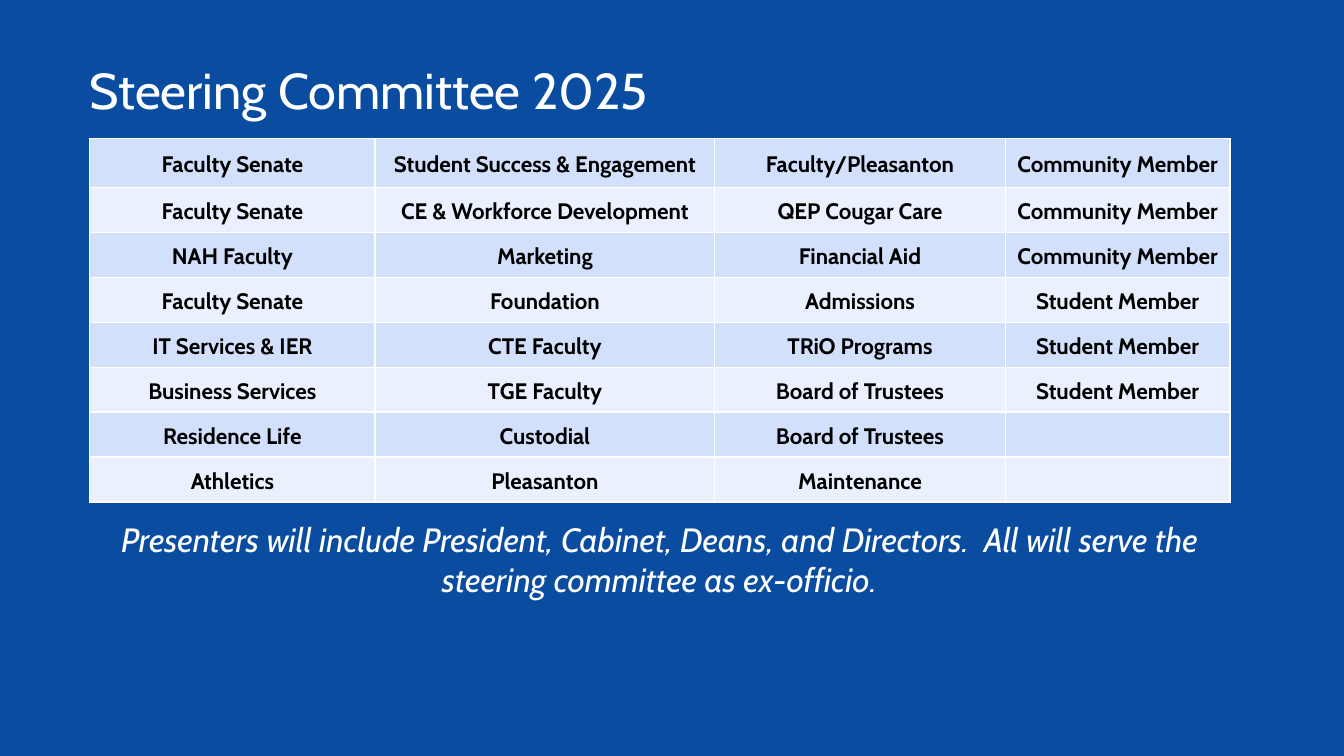
import pptx
import pptx.util
import pptx.dml.color
import pptx.enum.text
import pptx.oxml
import pptx.oxml.ns

Color = pptx.dml.color.RGBColor
BLUE = Color(0x0A, 0x4D, 0xA0)
WHITE = Color(0xFF, 0xFF, 0xFF)
BLACK = Color(0x00, 0x00, 0x00)
BANDS = (Color(0xD2, 0xE0, 0xFB), Color(0xEA, 0xF0, 0xFD))

WIDE = pptx.util.Inches(13.33)
HIGH = pptx.util.Inches(7.5)
FONT = "Cabin"
LEFT = pptx.enum.text.PP_ALIGN.LEFT
MID = pptx.enum.text.PP_ALIGN.CENTER

COLS = (2.83, 3.37, 2.88, 2.23)
TOTAL = 3.61
HEAD = 0.49

SEATS = (
    ("Faculty Senate", "Student Success & Engagement", "Faculty/Pleasanton", "Community Member"),
    ("Faculty Senate", "CE & Workforce Development", "QEP Cougar Care", "Community Member"),
    ("NAH Faculty", "Marketing", "Financial Aid", "Community Member"),
    ("Faculty Senate", "Foundation", "Admissions", "Student Member"),
    ("IT Services & IER", "CTE Faculty", "TRiO Programs", "Student Member"),
    ("Business Services", "TGE Faculty", "Board of Trustees", "Student Member"),
    ("Residence Life", "Custodial", "Board of Trustees", ""),
    ("Athletics", "Pleasanton", "Maintenance", ""),
)


def place(left, top, width, height):
    return (
        round(WIDE * left / 13.33),
        round(HIGH * top / 7.5),
        round(WIDE * width / 13.33),
        round(HIGH * height / 7.5),
    )


def add_run(para, text, size, color, bold=False, slant=False):
    run = para.add_run()
    run.text = text
    font = run.font
    font.name = FONT
    font.size = pptx.util.Pt(size)
    font.bold = bold
    font.italic = slant
    font.color.rgb = color


def add_text(slide, area, text, size, align=LEFT, slant=False):
    frame = slide.shapes.add_textbox(*place(*area)).text_frame
    frame.word_wrap = True
    para = frame.paragraphs[0]
    para.alignment = align
    add_run(para, text, size, WHITE, slant=slant)


def add_edge(cell):
    props = cell._tc.get_or_add_tcPr()
    space = pptx.oxml.ns.nsdecls("a")
    for side in "LRTB":
        props.append(pptx.oxml.parse_xml(
            f'<a:ln{side} {space} w="12700"><a:solidFill>'
            f'<a:srgbClr val="{WHITE}"/></a:solidFill></a:ln{side}>'
        ))


def fill_cell(cell, text, band):
    add_edge(cell)
    cell.fill.solid()
    cell.fill.fore_color.rgb = band
    cell.margin_left = cell.margin_right = pptx.util.Inches(0.07)
    cell.margin_top = cell.margin_bottom = 0
    cell.vertical_anchor = pptx.enum.text.MSO_ANCHOR.MIDDLE
    para = cell.text_frame.paragraphs[0]
    para.alignment = MID
    para.line_spacing = 1.15
    if text:
        add_run(para, text, 16, BLACK, bold=True)


def add_grid(slide, left, top):
    area = place(left, top, sum(COLS), TOTAL)
    table = slide.shapes.add_table(len(SEATS), len(COLS), *area).table
    for col, width in zip(table.columns, COLS):
        col.width = pptx.util.Inches(width)
    rest = (TOTAL - HEAD) / (len(SEATS) - 1)
    for i, names in enumerate(SEATS):
        table.rows[i].height = pptx.util.Inches(rest if i else HEAD)
        for j, name in enumerate(names):
            fill_cell(table.cell(i, j), name, BANDS[i % 2])


def main():
    deck = pptx.Presentation()
    deck.slide_width, deck.slide_height = WIDE, HIGH
    slide = deck.slides.add_slide(deck.slide_layouts[6])
    slide.background.fill.solid()
    slide.background.fill.fore_color.rgb = BLUE
    add_text(slide, (0.79, 0.54, 7.08, 0.71), "Steering Committee 2025", 36)
    add_grid(slide, 0.89, 1.37)
    note = (
        "Presenters will include President, Cabinet, Deans, and Directors.  "
        "All will serve the steering committee as ex-officio."
    )
    add_text(slide, (1.06, 5.1, 10.96, 0.91), note, 24, MID, True)
    deck.save("out.pptx")


if __name__ == "__main__":
    main()
